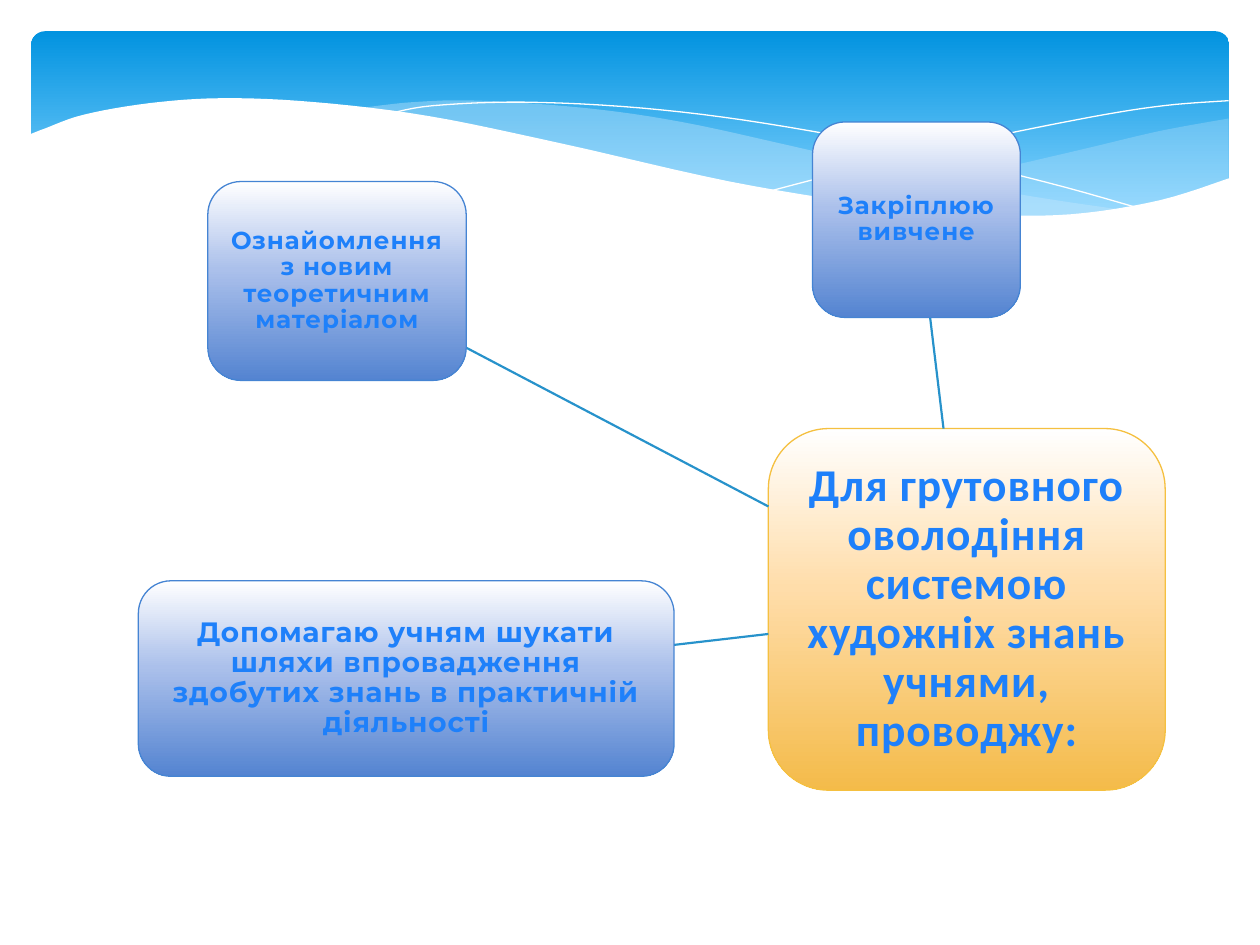
from lxml import etree
from pptx import Presentation
from pptx.dml.color import RGBColor
from pptx.enum.shapes import MSO_CONNECTOR, MSO_SHAPE
from pptx.enum.text import MSO_ANCHOR, PP_ALIGN
from pptx.oxml.ns import qn
from pptx.util import Cm, Pt

ROUND = MSO_SHAPE.ROUNDED_RECTANGLE
LINE = MSO_CONNECTOR.STRAIGHT
MIDDLE = MSO_ANCHOR.MIDDLE
CENTER = PP_ALIGN.CENTER

HEX = {
    "white": "FFFFFF", "mist": "C6E7FC", "sky": "0293E0", "pale": "83D3FE",
    "peach": "FFDDAA", "amber": "F4BB4A", "gold": "F5C040",
    "haze": "ABC0EB", "steel": "5484D1", "edge": "4584D3",
    "link": "2792CB", "text": "1E80FA",
}
BLUE = [(0, "white"), (44, "haze"), (100, "steel")]
WARM = [(0, "white"), (44, "peach"), (100, "amber")]

RIGHT = [
    [(24.77, 2.39), (23.39, 2.64), (21.87, 3), (19.79, 3.48), (17.93, 3.86), (16.79, 4.06)],
    [(16.79, 4.06), (18.59, 4.27), (20.12, 4.37), (21.69, 4.32), (23.19, 4.11),
     (24.1, 3.86), (24.77, 3.61)],
]
MID = [
    [(22.68, 4.24), (20.5, 3.91), (17.93, 3.4), (15.98, 2.95), (13.74, 2.46),
     (11.81, 2.18), (9.65, 2.03), (8.33, 2.06), (7.26, 2.18)],
    [(7.26, 2.18), (9.19, 2.46), (11.4, 2.95), (14.38, 3.63), (16.51, 4.01),
     (18.34, 4.27), (20.22, 4.39), (21.54, 4.37), (22.68, 4.24)],
]
FRONT = [
    [(24.82, 3.58), (23.37, 4.04), (21.59, 4.32), (19.76, 4.32), (17.48, 4.11),
     (14.71, 3.66), (11.35, 2.9), (8.64, 2.34), (6.35, 2.06), (4.5, 1.98),
     (3.02, 2.08), (1.7, 2.31), (0.91, 2.59), (0.58, 2.72)],
    [(0.58, 5.69)], [(24.82, 5.69)],
]
FALL = [[(7.85, 2.29), (8.74, 2.13), (10.57, 2.06), (12.95, 2.18), (15.44, 2.49),
         (18.47, 3.05), (21.11, 3.68), (23.04, 4.22)]]
RISE = [[(15.57, 3.84), (17.65, 3.3), (19.71, 2.82), (22, 2.36), (23.47, 2.13), (24.77, 2.03)]]

TOPICS = [
    ("Ознайомлення з новим теоретичним матеріалом", (4.19, 3.66, 5.21, 4.01), 14),
    ("Закріплюю вивчене", (16.38, 2.46, 4.19, 3.94), 14),
    ("Допомагаю учням шукати шляхи впровадження здобутих знань в практичній діяльності",
     (2.79, 11.71, 10.8, 3.94), 16),
]
GOAL = "Для грутовного оволодіння системою художніх знань учнями, проводжу:"
LINKS = [(15.49, 10.21, 9.4, 7.01), (19.02, 8.64, 18.75, 6.4), (15.49, 12.78, 13.59, 13)]


def color(name):
    return RGBColor.from_string(HEX[name])


def smooth(knots, steps=6):
    ends = [knots[0], *knots, knots[-1]]
    dots = [knots[0]]
    for a, b, c, d in zip(ends, ends[1:], ends[2:], ends[3:]):
        for t in (n / steps for n in range(1, steps + 1)):
            dots.append(tuple(
                (2 * q + (r - p) * t + (2 * p - 5 * q + 4 * r - s) * t ** 2
                 + (3 * q - p - 3 * r + s) * t ** 3) / 2
                for p, q, r, s in zip(a, b, c, d)))
    return dots


def write(shape, text, size=14, font="Montserrat", inset=0.1):
    frame = shape.text_frame
    frame.word_wrap = True
    frame.vertical_anchor = MIDDLE
    frame.margin_left = frame.margin_right = Cm(inset)
    frame.margin_top = frame.margin_bottom = Cm(inset)
    para = frame.paragraphs[0]
    para.alignment = CENTER
    para.line_spacing = 0.9
    run = para.add_run()
    run.text = text
    run.font.size = Pt(size)
    run.font.name = font
    run.font.bold = True
    run.font.color.rgb = color("text")
    run.font._element.set("spc", "50")


def blend(shape, stops):
    shape.fill.gradient()
    shape.fill.gradient_angle = 270
    group = shape._element.spPr.find(".//" + qn("a:gsLst"))
    for old in list(group):
        group.remove(old)
    for spot, name in stops:
        stop = etree.SubElement(group, qn("a:gs"), pos=str(spot * 1000))
        etree.SubElement(stop, qn("a:srgbClr"), val=HEX[name])


class Deck:
    def __init__(self, slide):
        self.slide = slide

    def box(self, place, stops, edge=None, round=None):
        shape = self.slide.shapes.add_shape(ROUND, *map(Cm, place))
        shape.shadow.inherit = False
        blend(shape, stops)
        if round is not None:
            shape.adjustments[0] = round
        if edge:
            shape.line.color.rgb = color(edge)
            shape.line.width = Pt(0.75)
        else:
            shape.line.fill.background()
        return shape

    def wave(self, curves, fill=None, alpha=100):
        dots = [(Cm(x), Cm(y)) for curve in curves for x, y in smooth(curve)]
        pen = self.slide.shapes.build_freeform(*dots[0])
        pen.add_line_segments(dots[1:], close=bool(fill))
        shape = pen.convert_to_shape()
        shape.shadow.inherit = False
        if fill:
            shape.fill.solid()
            shape.fill.fore_color.rgb = color(fill)
            tint = shape._element.spPr.find(".//" + qn("a:srgbClr"))
            etree.SubElement(tint, qn("a:alpha"), val=str(alpha * 1000))
            shape.line.fill.background()
        else:
            shape.fill.background()
            shape.line.color.rgb = color("white")
            shape.line.width = Pt(0)

    def link(self, ends):
        line = self.slide.shapes.add_connector(LINE, *map(Cm, ends))
        line.line.color.rgb = color("link")
        line.line.width = Pt(1.25)
        etree.SubElement(line._element.spPr, qn("a:effectLst"))


def main():
    show = Presentation()
    show.slide_width, show.slide_height = Cm(25.4), Cm(19.05)
    deck = Deck(show.slides.add_slide(show.slide_layouts[6]))
    deck.box((0.63, 0.63, 24.15, 3.96), [(0, "sky"), (90, "pale")], round=0.07)
    deck.wave(RIGHT, "mist", 29)
    deck.wave(MID, "mist", 40)
    deck.wave(FALL)
    deck.wave(RISE)
    deck.wave(FRONT, "white")
    goal = deck.box((15.49, 8.64, 8, 7.29), WARM, "gold")
    write(goal, GOAL, size=26, font="Calibri", inset=0.18)
    for ends, (text, place, size) in zip(LINKS, TOPICS):
        deck.link(ends)
        write(deck.box(place, BLUE, "edge"), text, size=size)
    show.save("out.pptx")


if __name__ == "__main__":
    main()
